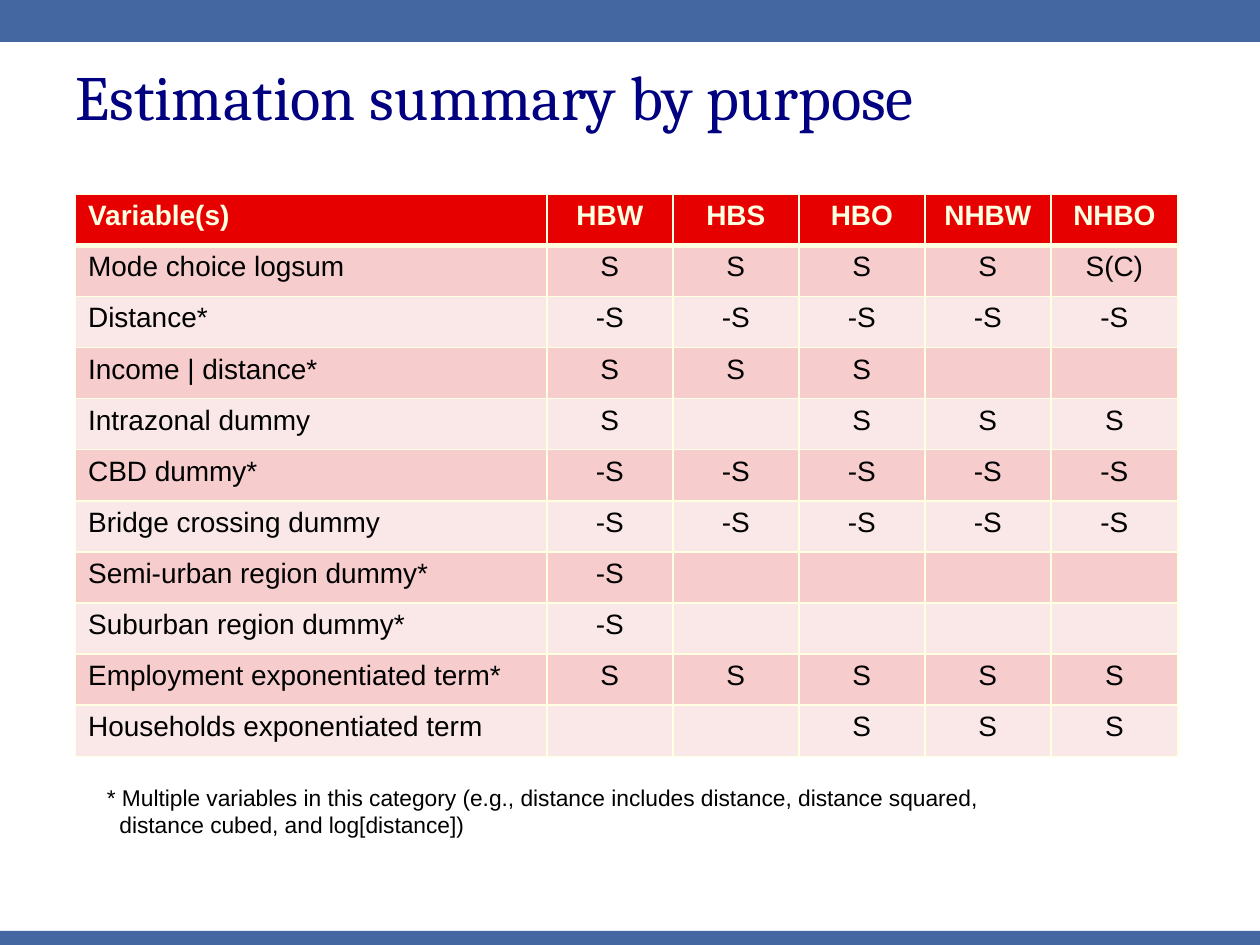
from lxml.etree import SubElement
from pptx import Presentation
from pptx.dml.color import RGBColor
from pptx.enum.shapes import MSO_SHAPE as SHAPE
from pptx.enum.text import MSO_ANCHOR as ANCHOR, PP_ALIGN as ALIGN
from pptx.oxml.ns import qn
from pptx.util import Pt

COLORS = {
    "bar": "4467A1", "title": "000080", "text": "000000", "cream": "FFFFE1",
    "header": "E70000", "odd": "F6CCCC", "even": "FAE7E7",
}
HEADINGS = ["Variable(s)", "HBW", "HBS", "HBO", "NHBW", "NHBO"]
VARIABLES = [
    ["Mode choice logsum", "S", "S", "S", "S", "S(C)"],
    ["Distance*", "-S", "-S", "-S", "-S", "-S"],
    ["Income | distance*", "S", "S", "S", "", ""],
    ["Intrazonal dummy", "S", "", "S", "S", "S"],
    ["CBD dummy*", "-S", "-S", "-S", "-S", "-S"],
    ["Bridge crossing dummy", "-S", "-S", "-S", "-S", "-S"],
    ["Semi-urban region dummy*", "-S", "", "", "", ""],
    ["Suburban region dummy*", "-S", "", "", "", ""],
    ["Employment exponentiated term*", "S", "S", "S", "S", "S"],
    ["Households exponentiated term", "", "", "S", "S", "S"],
]
FOOTNOTE = [
    "* Multiple variables in this category (e.g., distance includes distance, distance squared,",
    "distance cubed, and log[distance])",
]
COL_WIDTHS = [269.28, 72, 72, 72, 72, 72.72]
ROW_HEIGHT = 29.2


def rgb(name):
    return RGBColor.from_string(COLORS[name])


def add_run(p, text, size, color, font="Arial", bold=False):
    r = p.add_run()
    r.text = text
    r.font.name, r.font.size, r.font.bold = font, Pt(size), bold
    r.font.color.rgb = rgb(color)


def add_bar(s, top, height):
    sp = s.shapes.add_shape(SHAPE.RECTANGLE, 0, Pt(top), Pt(720), Pt(height))
    sp.shadow.inherit = False
    sp.fill.solid()
    sp.fill.fore_color.rgb = rgb("bar")
    sp.line.fill.background()


def add_text_frame(s, left, top, width, height):
    sp = s.shapes.add_textbox(Pt(left), Pt(top), Pt(width), Pt(height))
    tf = sp.text_frame
    tf.word_wrap = True
    return tf


def add_borders(cell, top, bottom):
    tcPr = cell._tc.get_or_add_tcPr()
    for side, width in (("L", 1), ("R", 1), ("T", top), ("B", bottom)):
        ln = SubElement(tcPr, qn(f"a:ln{side}"), w=str(Pt(width)))
        fill = SubElement(ln, qn("a:solidFill"))
        SubElement(fill, qn("a:srgbClr"), val=COLORS["cream"])


def add_summary_table(s, left, top):
    rows = [HEADINGS] + VARIABLES
    table = s.shapes.add_table(
        len(rows), len(HEADINGS), Pt(left), Pt(top),
        Pt(sum(COL_WIDTHS)), Pt(ROW_HEIGHT * len(rows))).table
    for column, width in zip(table.columns, COL_WIDTHS):
        column.width = Pt(width)
    for i, values in enumerate(rows):
        table.rows[i].height = Pt(ROW_HEIGHT)
        is_header = i == 0
        fill = "header" if is_header else "odd" if i % 2 else "even"
        for j, value in enumerate(values):
            cell = table.cell(i, j)
            # A thick rule separates the header from the body
            add_borders(cell, 3 if i == 1 else 1, 3 if is_header else 1)
            cell.fill.solid()
            cell.fill.fore_color.rgb = rgb(fill)
            p = cell.text_frame.paragraphs[0]
            p.alignment = ALIGN.CENTER if j else ALIGN.LEFT
            if value:
                add_run(p, value, 16, "cream" if is_header else "text", bold=is_header)


def add_footnote(s):
    p = add_text_frame(s, 54, 444.24, 527.76, 38.88).paragraphs[0]
    # Hanging indent for the second line
    pPr = p._p.get_or_add_pPr()
    pPr.set("marL", str(Pt(7.2)))
    pPr.set("indent", str(-Pt(7.2)))
    for i, line in enumerate(FOOTNOTE):
        if i:
            p.add_line_break()
        add_run(p, line, 13, "text")


def main():
    prs = Presentation()
    prs.slide_width, prs.slide_height = Pt(720), Pt(540)
    s = prs.slides.add_slide(prs.slide_layouts[6])

    # Top and bottom bars
    add_bar(s, 0, 24)
    add_bar(s, 532, 8)

    # Title
    tf = add_text_frame(s, 36, 29.5, 648, 50.4)
    tf.vertical_anchor = ANCHOR.MIDDLE
    add_run(tf.paragraphs[0], "Estimation summary by purpose", 36, "title", "Cambria")

    # Table and its footnote
    add_summary_table(s, 43.2, 111)
    add_footnote(s)

    prs.save("out.pptx")


if __name__ == "__main__":
    main()
